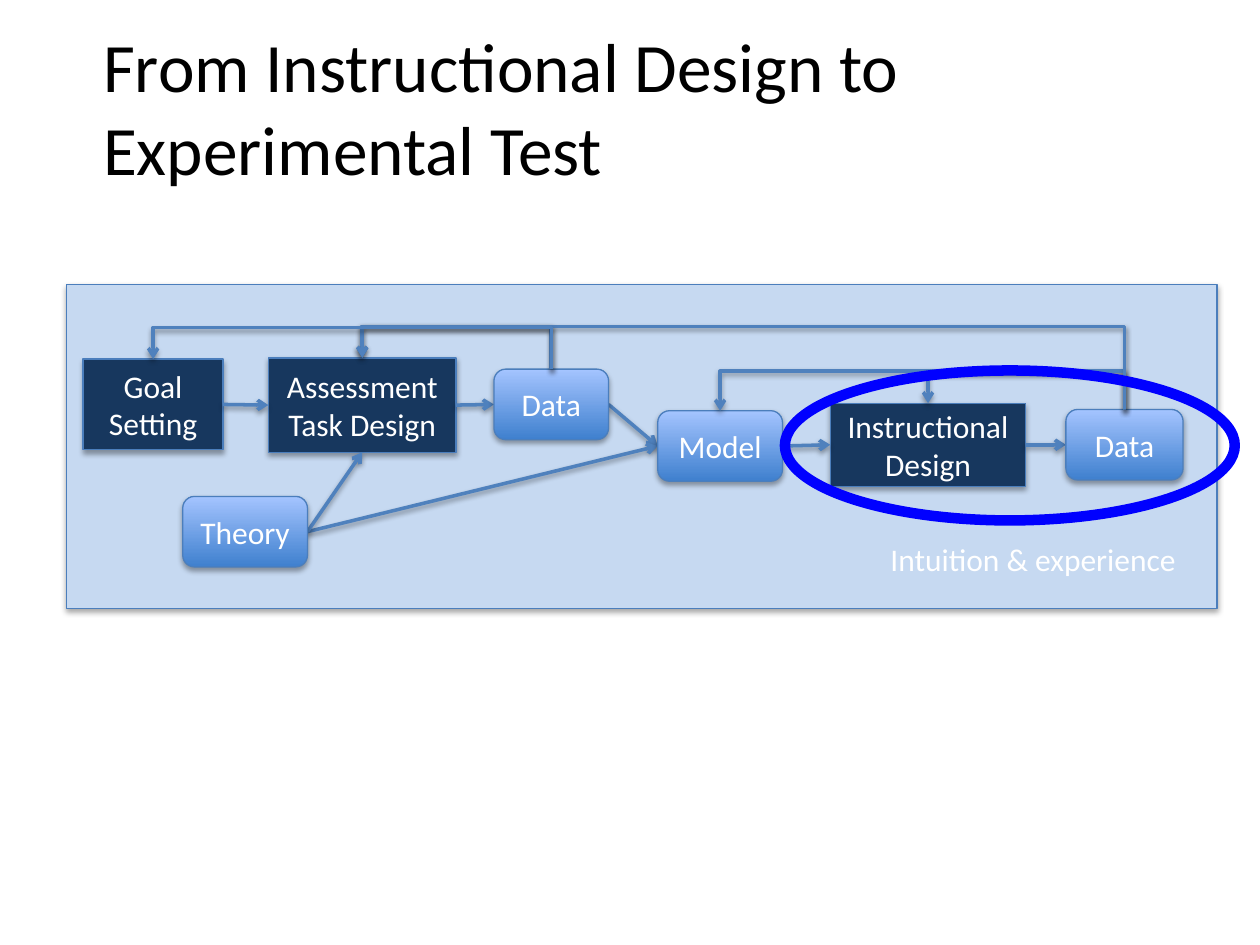
from lxml.etree import SubElement
from pptx import Presentation
from pptx.dml.color import RGBColor
from pptx.enum.shapes import MSO_CONNECTOR, MSO_SHAPE
from pptx.enum.text import MSO_ANCHOR, PP_ALIGN
from pptx.oxml.ns import qn
from pptx.util import Inches, Pt

BLACK = RGBColor(0x00, 0x00, 0x00)
WHITE = RGBColor(0xFF, 0xFF, 0xFF)
PANEL = RGBColor(0xC6, 0xD9, 0xF1)
NAVY = RGBColor(0x17, 0x37, 0x5E)
EDGE = RGBColor(0x4B, 0x7E, 0xBC)
ARROW = RGBColor(0x4F, 0x81, 0xBD)
GRAD_LOW = RGBColor(0x3F, 0x80, 0xCE)
GRAD_HIGH = RGBColor(0xA4, 0xC4, 0xFF)
HIGHLIGHT = RGBColor(0x00, 0x00, 0xFF)

# Process steps, relative to the panel: kind, text, (left, top, width, height)
STEPS = {
    "goal": ("process", "Goal\nSetting", (0.13, 0.59, 1.11, 0.72)),
    "assessment": ("process", "Assessment Task Design", (1.6, 0.58, 1.49, 0.75)),
    "instruction": ("process", "Instructional Design", (6.06, 0.94, 1.55, 0.66)),
    "theory": ("input", "Theory", (0.92, 1.68, 0.99, 0.56)),
    "early data": ("input", "Data", (3.39, 0.67, 0.91, 0.56)),
    "model": ("input", "Model", (4.69, 1.0, 0.99, 0.56)),
    "late data": ("input", "Data", (7.93, 0.99, 0.93, 0.56)),
}
# Straight arrows: start step, start side, end step, end side
FLOWS = [
    ("goal", "right", "assessment", "left"),
    ("assessment", "right", "early data", "left"),
    ("early data", "right", "model", "left"),
    ("theory", "right", "model", "left"),
    ("model", "right", "instruction", "left"),
    ("instruction", "right", "late data", "left"),
    ("theory", "right", "assessment", "bottom"),
]
# Feedback loops: start step, end step, height of the horizontal run
LOOPS = [
    ("early data", "assessment", 0.33),
    ("late data", "instruction", 0.69),
    ("late data", "model", 0.68),
    ("late data", "assessment", 0.33),
    ("early data", "goal", 0.34),
]


def add_shadow(sp, blur=3.1, dist=1.8, alpha=35):
    effects = SubElement(sp._element.spPr, qn("a:effectLst"))
    shadow = SubElement(effects, qn("a:outerShdw"), blurRad=str(Pt(blur)),
                        dist=str(Pt(dist)), dir="5400000", rotWithShape="0")
    color = SubElement(shadow, qn("a:srgbClr"), val="000000")
    SubElement(color, qn("a:alpha"), val=str(alpha * 1000))


def write_text(sp, text, size=18, color=WHITE, align=PP_ALIGN.CENTER,
               anchor=MSO_ANCHOR.MIDDLE):
    tf = sp.text_frame
    tf.word_wrap = True
    tf.vertical_anchor = anchor
    tf.text = text
    for p in tf.paragraphs:
        p.alignment = align
        p.font.size = Pt(size)
        p.font.name = "Calibri"
        p.font.color.rgb = color


def add_label(slide, box, text, **fmt):
    write_text(slide.shapes.add_textbox(*map(Inches, box)), text, **fmt)


def add_box(slide, shape, box, fill=None, gradient=None, line=EDGE, width=0.75,
            shadow=True):
    sp = slide.shapes.add_shape(shape, *map(Inches, box))
    if gradient:
        sp.fill.gradient()
        sp.fill.gradient_angle = 90
        for stop, color, pos in zip(sp.fill.gradient_stops, gradient, (0, 1)):
            stop.color.rgb = color
            stop.position = pos
    elif fill is not None:
        sp.fill.solid()
        sp.fill.fore_color.rgb = fill
    else:
        sp.fill.background()
    sp.line.color.rgb = line
    sp.line.width = Pt(width)
    if shadow:
        add_shadow(sp)
    else:
        sp.shadow.inherit = False
    return sp


def add_arrow(slide, start, end, kind=MSO_CONNECTOR.STRAIGHT):
    c = slide.shapes.add_connector(kind, *map(Inches, (*start, *end)))
    c.line.color.rgb = ARROW
    c.line.width = Pt(2)
    SubElement(c.line._get_or_add_ln(), qn("a:tailEnd"), type="arrow")
    add_shadow(c, dist=1.6, alpha=38)
    return c


def add_loop(slide, start, end, run_y):
    """Arrow that goes up to run_y, left, and down to its end."""
    c = add_arrow(slide, start, end, MSO_CONNECTOR.ELBOW)
    (x1, y1), (x2, y2) = start, end
    # The elbow is turned by 270 degrees, so width and height change places
    w, h = abs(y2 - y1), abs(x2 - x1)
    c.left, c.top = Inches((x1 + x2 - w) / 2), Inches((y1 + y2 - h) / 2)
    c.width, c.height = Inches(w), Inches(h)
    xfrm = c._element.spPr.find(qn("a:xfrm"))
    xfrm.set("rot", "16200000")
    xfrm.set("flipV", "1")
    xfrm.set("flipH", "1" if y2 > y1 else "0")
    geom = c._element.spPr.find(qn("a:prstGeom"))
    guides = geom.find(qn("a:avLst"))
    if guides is None:
        guides = SubElement(geom, qn("a:avLst"))
    bend = round((run_y - y1) / (y2 - y1) * 100000)
    SubElement(guides, qn("a:gd"), name="adj1", fmla=f"val {bend}")


def side_point(box, side):
    x, y, w, h = box
    return {"left": (x, y + h / 2), "right": (x + w, y + h / 2),
            "top": (x + w / 2, y), "bottom": (x + w / 2, y + h)}[side]


def add_steps(slide, boxes, kind):
    for name, (step_kind, text, _) in STEPS.items():
        if step_kind != kind:
            continue
        if kind == "process":
            sp = add_box(slide, MSO_SHAPE.FLOWCHART_PROCESS, boxes[name], fill=NAVY)
        else:
            sp = add_box(slide, MSO_SHAPE.FLOWCHART_ALTERNATE_PROCESS, boxes[name],
                         gradient=(GRAD_LOW, GRAD_HIGH))
        write_text(sp, text)


def add_process_diagram(slide, box):
    left, top = box[:2]
    boxes = {name: (left + x, top + y, w, h)
             for name, (_, _, (x, y, w, h)) in STEPS.items()}

    # Panel, design steps and forward arrows
    add_box(slide, MSO_SHAPE.RECTANGLE, box, fill=PANEL)
    add_steps(slide, boxes, "process")
    for first, out_side, second, in_side in FLOWS:
        add_arrow(slide, side_point(boxes[first], out_side),
                  side_point(boxes[second], in_side))

    # Caption, rounded steps and feedback loops
    add_label(slide, (left + 6.31, top + 1.98, 2.59, 0.4), "Intuition & experience",
              align=PP_ALIGN.RIGHT, anchor=MSO_ANCHOR.TOP)
    add_steps(slide, boxes, "input")
    for first, second, run in LOOPS:
        add_loop(slide, side_point(boxes[first], "top"),
                 side_point(boxes[second], "top"), top + run)

    # Highlight ring
    add_box(slide, MSO_SHAPE.OVAL, (left + 5.7, top + 0.68, 3.57, 1.19),
            line=HIGHLIGHT, width=6, shadow=False)


def main():
    prs = Presentation()
    prs.slide_width, prs.slide_height = Inches(10), Inches(7.5)
    slide = prs.slides.add_slide(prs.slide_layouts[6])
    add_label(slide, (0.72, 0.23, 8.68, 1.23),
              "From Instructional Design to Experimental Test",
              size=39.6, color=BLACK, align=PP_ALIGN.LEFT)
    add_process_diagram(slide, (0.53, 2.26, 9.13, 2.57))
    prs.save("out.pptx")


if __name__ == "__main__":
    main()
